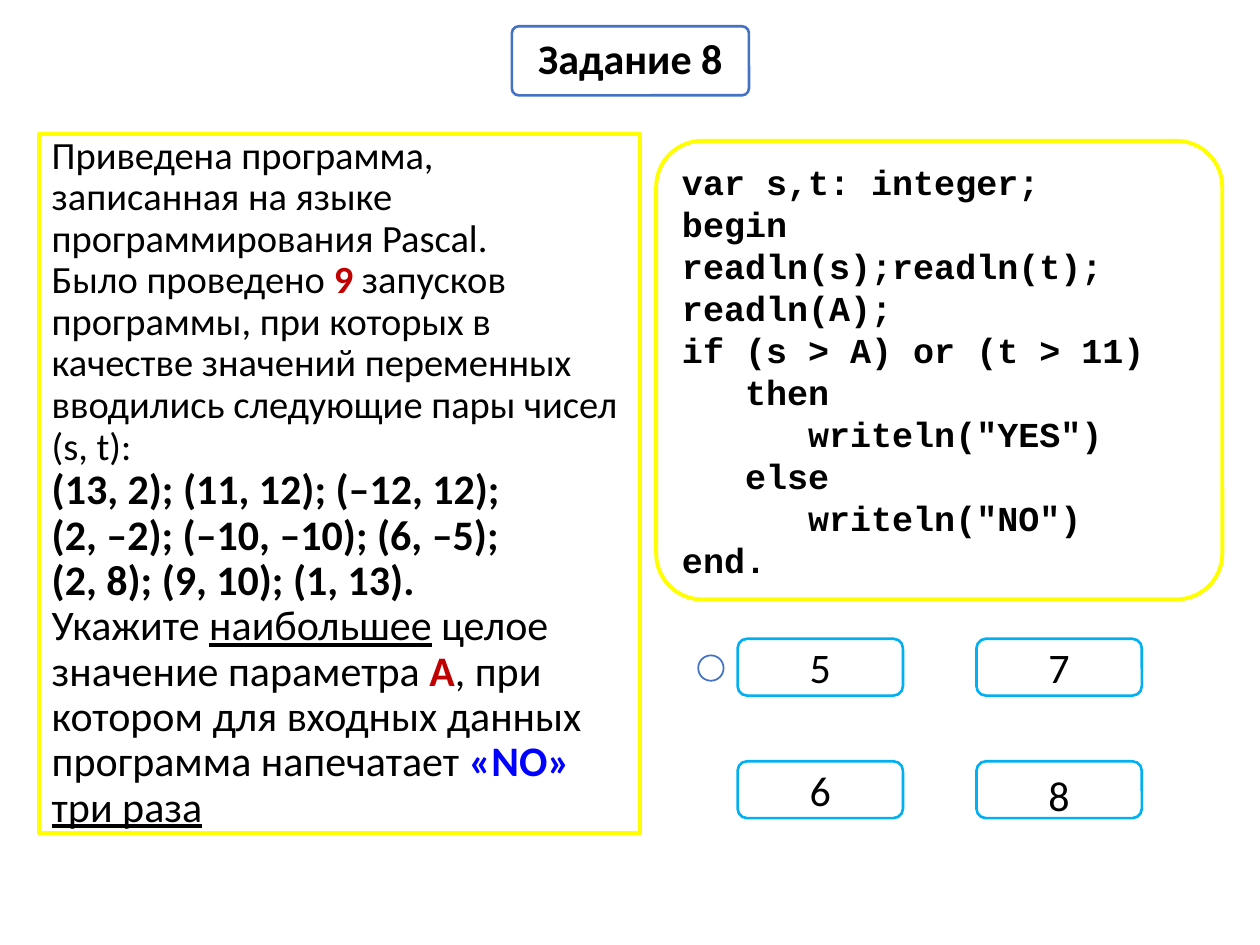
from dataclasses import dataclass
from itertools import product

from pptx import Presentation
from pptx.dml.color import RGBColor
from pptx.enum.shapes import MSO_SHAPE
from pptx.enum.text import MSO_ANCHOR, PP_ALIGN
from pptx.util import Pt


@dataclass(frozen=True)
class Theme:
    sans: str = "Calibri"
    mono: str = "Courier New"
    white: str = "FFFFFF"
    black: str = "000000"
    red: str = "C00000"
    ink: str = "0000FF"
    blue: str = "4472C4"
    cyan: str = "00B0F0"
    yellow: str = "FFFF00"
    big: float = 24
    mid: float = 22
    small: float = 20


T = Theme()


@dataclass(frozen=True)
class Run:
    text: str
    size: float = T.big
    bold: bool = False
    under: bool = False
    color: str = T.black
    font: str = T.sans


@dataclass(frozen=True)
class Box:
    left: float
    top: float
    width: float
    height: float
    line: str
    weight: float
    kind: MSO_SHAPE = MSO_SHAPE.ROUNDED_RECTANGLE
    round: float | None = None


BREAK = None
Para = list[Run | None]


def draw(slide, box: Box, paras: list[Para], align=PP_ALIGN.LEFT,
         gap: float = 1.0) -> None:
    """Draw an outlined box; BREAK in a paragraph starts a new line."""
    shape = slide.shapes.add_shape(box.kind, Pt(box.left), Pt(box.top),
                                   Pt(box.width), Pt(box.height))
    shape.shadow.inherit = False
    if box.round is not None:
        shape.adjustments[0] = box.round
    shape.fill.solid()
    shape.fill.fore_color.rgb = RGBColor.from_string(T.white)
    shape.line.color.rgb = RGBColor.from_string(box.line)
    shape.line.width = Pt(box.weight)
    frame = shape.text_frame
    frame.word_wrap = True
    frame.vertical_anchor = MSO_ANCHOR.MIDDLE
    for num, runs in enumerate(paras):
        para = frame.add_paragraph() if num else frame.paragraphs[0]
        para.alignment = align
        para.line_spacing = gap
        for item in runs:
            if item is BREAK:
                para.add_line_break()
            else:
                add_run(para, item)


def add_run(para, item: Run) -> None:
    run = para.add_run()
    run.text = item.text
    font = run.font
    font.name = item.font
    font.size = Pt(item.size)
    font.bold = item.bold
    font.underline = item.under
    font.color.rgb = RGBColor.from_string(item.color)


TITLE = Box(292.5, 15, 135.5, 39.5, T.blue, 1.5, round=0.1)
TASK = Box(22.5, 76.5, 343.5, 399.5, T.yellow, 2.25, MSO_SHAPE.RECTANGLE)
CODE = Box(375, 80.5, 323.5, 262, T.yellow, 2.25, round=0.1)
RADIO = Box(399, 374.5, 14.5, 14.5, T.blue, 1, MSO_SHAPE.OVAL)

TEXT: Para = [
    Run("Приведена программа, записанная на языке программирования Pascal.",
        T.mid), BREAK,
    Run("Было проведено ", T.mid),
    Run("9", T.mid, bold=True, color=T.red),
    Run(" запусков программы, при которых в качестве значений переменных "
        "вводились следующие пары чисел (s, t):", T.mid), BREAK,
    Run("(13, 2); (11, 12); (–12, 12);", bold=True), BREAK,
    Run("(2, –2); (–10, –10); (6, –5);", bold=True), BREAK,
    Run("(2, 8); (9, 10); (1, 13).", bold=True), BREAK,
    Run("Укажите "),
    Run("наибольшее", under=True),
    Run(" целое значение параметра "),
    Run("А", bold=True, color=T.red),
    Run(", при котором для входных данных программа напечатает "),
    Run("«NO» ", bold=True, color=T.ink),
    Run("три раза", under=True),
]

PASCAL = """var s,t: integer;
begin
readln(s);readln(t);
readln(A);
if (s > A) or (t > 11)
   then
      writeln("YES")
   else
      writeln("NO")
end."""

COLS = (421.5, 558)
ROWS = (365, 435)
KEYS = ("5", "6", "7", "8")


def main() -> None:
    deck = Presentation()
    deck.slide_width, deck.slide_height = Pt(720), Pt(540)
    slide = deck.slides.add_slide(deck.slide_layouts[6])
    draw(slide, TITLE, [[Run("Задание 8", bold=True)]], PP_ALIGN.CENTER, 0.9)
    draw(slide, TASK, [TEXT], gap=0.9)
    draw(slide, CODE, [[Run(row, T.small, bold=True, font=T.mono)]
                       for row in PASCAL.splitlines()])
    for key, (left, top) in zip(KEYS, product(COLS, ROWS)):
        draw(slide, Box(left, top, 94.5, 32.5, T.cyan, 1.5), [[Run(key)]],
             PP_ALIGN.CENTER, 1.2 if key == "8" else 1.0)
    draw(slide, RADIO, [])
    deck.save("out.pptx")


if __name__ == "__main__":
    main()
